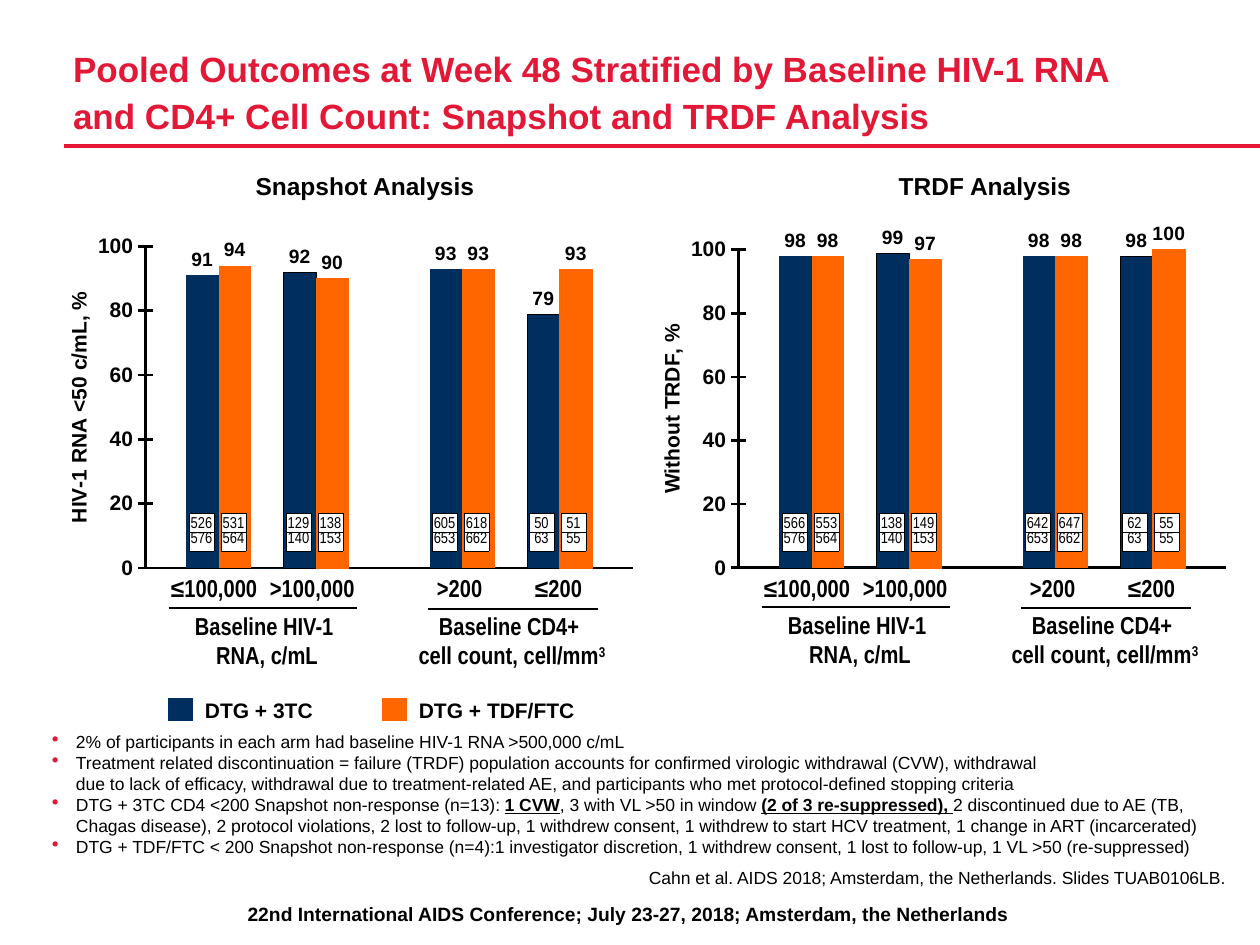
import pptx
import pptx.util
import pptx.chart.data
import pptx.dml.color
import pptx.enum.chart
import pptx.enum.shapes
import pptx.enum.text
import pptx.oxml
import pptx.oxml.ns

RED = pptx.dml.color.RGBColor(0xE3, 0x18, 0x36)
NAVY = pptx.dml.color.RGBColor(0x00, 0x2F, 0x5F)
ORANGE = pptx.dml.color.RGBColor(0xFF, 0x66, 0x00)
BLUE = pptx.dml.color.RGBColor(0x00, 0x98, 0xDB)
BLACK = pptx.dml.color.RGBColor(0, 0, 0)
WHITE = pptx.dml.color.RGBColor(0xFF, 0xFF, 0xFF)
SCALE = 914400 / 126
ALIGN = pptx.enum.text.PP_ALIGN
ANCHOR = pptx.enum.text.MSO_ANCHOR
NARROW = "Arial Narrow"
PLAIN = "{2D5ABB26-0587-4C30-8999-92F81FD0307C}"

BARS = [("Series 1", NAVY, None), ("Series 2", ORANGE, None), ("Series 3", BLUE, None),
        ("Series 4", NAVY, BLACK), ("Series 5", ORANGE, ORANGE)]
GROUPS = [(109, "≤100,000", 87), (208, ">100,000", 86), (375, ">200", 46), (473, "≤200", 48)]
RULES = [(107, 295, 0), (366, 536, 1)]
PAIRS = [127, 224, 370, 467]
NOTES = [
    [("2% of participants in each arm had baseline HIV-1 RNA >500,000 c/mL", False)],
    [("Treatment related discontinuation = failure (TRDF) population accounts for confirmed "
      "virologic withdrawal (CVW), withdrawal\ndue to lack of efficacy, withdrawal due to "
      "treatment-related AE, and participants who met protocol-defined stopping criteria", False)],
    [("DTG + 3TC CD4 <200 Snapshot non-response (n=13): ", False), ("1 CVW", True),
     (", 3 with VL >50 in window ", False), ("(2 of 3 re-suppressed), ", True),
     ("2 discontinued due to AE (TB, Chagas disease), 2 protocol violations, 2 lost to follow-up, "
      "1 withdrew consent, 1 withdrew to start HCV treatment, 1 change in ART (incarcerated)", False)],
    [("DTG + TDF/FTC < 200 Snapshot non-response (n=4):1 investigator discretion, "
      "1 withdrew consent, 1 lost to follow-up, 1 VL >50 (re-suppressed)", False)],
]


def px(n):
    return round(n * SCALE)


def style(font, size, bold=False, color=BLACK, name="Arial"):
    font.size = pptx.util.Pt(size)
    font.bold = bold
    font.color.rgb = color
    font.name = name


def frame(slide, x, y, w, h, wrap=True):
    tf = slide.shapes.add_textbox(px(x), px(y), px(w), px(h)).text_frame
    tf.margin_left = tf.margin_right = tf.margin_top = tf.margin_bottom = 0
    tf.word_wrap = wrap
    return tf


def label(slide, box, text, size, bold=True, color=BLACK, name="Arial", align=ALIGN.LEFT, wrap=True):
    tf = frame(slide, *box, wrap)
    para = tf.paragraphs[0]
    para.text = text
    para.alignment = align
    for run in para.runs:
        style(run.font, size, bold, color, name)
    return tf


def rule(slide, x1, x2, y, color, width):
    line = slide.shapes.add_connector(pptx.enum.shapes.MSO_CONNECTOR.STRAIGHT,
                                      px(x1), px(y), px(x2), px(y))
    line.line.color.rgb = color
    line.line.width = pptx.util.Pt(width)
    pptx.oxml.ns.qn("a:effectLst")
    line._element.spPr.append(pptx.oxml.parse_xml(
        f'<a:effectLst {pptx.oxml.ns.nsdecls("a")}/>'))


def grid(slide, x, y, cols, rows):
    table = slide.shapes.add_table(len(rows), len(cols), px(x), px(y),
                                   px(sum(cols)), px(sum(rows))).table
    table.first_row = table.horz_banding = False
    table._tbl.tblPr.find(pptx.oxml.ns.qn("a:tableStyleId")).text = PLAIN
    for col, w in zip(table.columns, cols):
        col.width = px(w)
    for row, h in zip(table.rows, rows):
        row.height = px(h)
    return table


def cell_fill(cell, sides, edge, width, fill):
    for side in sides:
        cell._tc.get_or_add_tcPr().append(pptx.oxml.parse_xml(
            f'<a:ln{side} {pptx.oxml.ns.nsdecls("a")} w="{pptx.util.Pt(width)}">'
            f'<a:solidFill><a:srgbClr val="{edge}"/></a:solidFill></a:ln{side}>'))
    cell.fill.solid()
    cell.fill.fore_color.rgb = fill
    cell.margin_left = cell.margin_right = cell.margin_top = cell.margin_bottom = 0


def ratio(slide, x, top, base):
    table = grid(slide, x, 513, [25], [19, 19])
    for row, (text, anchor) in enumerate([(top, ANCHOR.BOTTOM), (base, ANCHOR.TOP)]):
        cell = table.cell(row, 0)
        cell_fill(cell, "LRTB", BLACK, 0.5, WHITE)
        cell.vertical_anchor = anchor
        para = cell.text_frame.paragraphs[0]
        para.text = str(text)
        para.alignment = ALIGN.CENTER
        style(para.runs[0].font, 9, name=NARROW)


def legend(slide):
    table = grid(slide, 168, 698, [25, 189, 25, 202], [25])
    items = [(NAVY, ""), (WHITE, "DTG + 3TC"), (ORANGE, ""), (WHITE, "DTG + TDF/FTC")]
    for col, (fill, text) in enumerate(items):
        cell = table.cell(0, col)
        cell_fill(cell, "B", WHITE, 3, fill)
        cell.vertical_anchor = ANCHOR.MIDDLE
        para = cell.text_frame.paragraphs[0]
        if text:
            cell.margin_left = px(12)
            para.text = text
            style(para.runs[0].font, 12, True)
        else:
            para._p.get_or_add_endParaRPr().set("sz", "1000")


def chart(slide, x, title, rows, top, tall):
    data = pptx.chart.data.CategoryChartData()
    data.categories = ["1", "2"]
    for (name, _, _), vals in zip(BARS, rows):
        data.add_series(name, vals)
    obj = slide.shapes.add_chart(pptx.enum.chart.XL_CHART_TYPE.COLUMN_CLUSTERED,
                                 px(x), px(219), px(576), px(362), data).chart
    obj.has_title = obj.has_legend = False
    style(obj.font, 18)
    plot = obj.plots[0]
    plot.gap_width = 250
    plot.overlap = 0
    plot.vary_by_categories = False
    for bar, (name, fill, edge) in zip(plot.series, BARS):
        bar.format.fill.solid()
        bar.format.fill.fore_color.rgb = fill
        if edge is not None:
            bar.format.line.color.rgb = edge
            bar.format.line.width = pptx.util.Pt(0.25)
        if name != "Series 3":
            tags = bar.data_labels
            tags.show_value = True
            tags.position = pptx.enum.chart.XL_LABEL_POSITION.OUTSIDE_END
            tags.number_format = "0"
            tags.number_format_is_linked = False
            style(tags.font, 11, True)
    cat, val = obj.category_axis, obj.value_axis
    for axis in (cat, val):
        axis.has_major_gridlines = False
        axis.format.line.color.rgb = BLACK
        axis.format.line.width = pptx.util.Pt(1.5)
        style(axis.tick_labels.font, 12, True)
    cat.major_tick_mark = pptx.enum.chart.XL_TICK_MARK.NONE
    cat.tick_label_position = pptx.enum.chart.XL_TICK_LABEL_POSITION.NONE
    val.major_tick_mark = pptx.enum.chart.XL_TICK_MARK.CROSS
    val.minimum_scale, val.maximum_scale, val.major_unit = 0, 100, 20
    val.tick_labels.number_format = "0"
    val.tick_labels.number_format_is_linked = False
    tf = val.axis_title.text_frame
    tf.text = title
    style(tf.paragraphs[0].runs[0].font, 12, True)
    tf._txBody.bodyPr.set("rot", "-5400000")
    tf._txBody.bodyPr.set("vert", "horz")
    area = obj._chartSpace.chart.plotArea
    for old in area.findall(pptx.oxml.ns.qn("c:layout")):
        area.remove(old)
    area.insert(0, pptx.oxml.parse_xml(
        f'<c:layout {pptx.oxml.ns.nsdecls("c")}><c:manualLayout><c:layoutTarget val="inner"/>'
        f'<c:xMode val="edge"/><c:yMode val="edge"/><c:x val="0.145"/><c:y val="{top}"/>'
        f'<c:w val="0.846"/><c:h val="{tall}"/></c:manualLayout></c:layout>'))


def panel(slide, x, y, head, head_x, title, rows, top, tall, counts):
    chart(slide, x, title, rows, top, tall)
    label(slide, (head_x, 171, 440, 30), head, 14, align=ALIGN.CENTER)
    for left, text, w in GROUPS:
        label(slide, (x + left, 573, w, 30), text, 14, name=NARROW, wrap=False)
    for start, end, drop in RULES:
        rule(slide, x + start, x + end, y + drop, BLACK, 1.5)
    label(slide, (x + 132, y + 3, 146, 59), "Baseline HIV-1 \nRNA, c/mL", 14,
          name=NARROW, align=ALIGN.CENTER, wrap=False)
    tf = label(slide, (x + 355, y + 3, 190, 59), "Baseline CD4+ \ncell count, cell/mm", 14,
               name=NARROW, align=ALIGN.CENTER, wrap=False)
    power = tf.paragraphs[0].add_run()
    power.text = "3"
    style(power.font, 14, True, name=NARROW)
    power.font._element.set("baseline", "30000")
    for i, (part, whole) in enumerate(counts):
        ratio(slide, x + PAIRS[i // 2] + i % 2 * 32, part, whole)


def bullets(slide):
    tf = frame(slide, 36, 731, 1168, 116)
    for i, parts in enumerate(NOTES):
        para = tf.paragraphs[0] if i == 0 else tf.add_paragraph()
        para.text = parts[0][0]
        for text, _ in parts[1:]:
            para.add_run().text = text
        props = para._p.get_or_add_pPr()
        props.set("marL", str(px(40)))
        props.set("indent", str(px(-24)))
        for body in (f'buClr {pptx.oxml.ns.nsdecls("a")}><a:srgbClr val="{RED}"/></a:buClr>',
                     f'buSzPct {pptx.oxml.ns.nsdecls("a")} val="115000"/>',
                     f'buChar {pptx.oxml.ns.nsdecls("a")} char="•"/>'):
            props.append(pptx.oxml.parse_xml("<a:" + body))
        marks = [mark for _, mark in parts] if len(parts) > 1 else [False] * len(para.runs)
        for run, mark in zip(para.runs, marks):
            style(run.font, 10, mark)
            run.font.underline = mark


def main():
    deck = pptx.Presentation()
    deck.slide_width, deck.slide_height = px(1260), px(945)
    slide = deck.slides.add_slide(deck.slide_layouts[6])
    rule(slide, 64, 1260, 146, RED, 2)
    tf = label(slide, (73, 21, 1040, 116), "Pooled Outcomes at Week 48 Stratified by Baseline HIV-1 "
               "RNA and CD4+ Cell Count: Snapshot and TRDF Analysis", 20, color=RED)
    tf.vertical_anchor = ANCHOR.BOTTOM
    tf.paragraphs[0].line_spacing = pptx.util.Pt(27)
    panel(slide, 62, 608, "Snapshot Analysis", 145, "HIV-1 RNA <50 c/mL, %",
          [(91, 93), (94, 93), (0, None), (92, 79), (90, 93)], 0.076, 0.889,
          [(526, 576), (531, 564), (129, 140), (138, 153),
           (605, 653), (618, 662), (50, 63), (51, 55)])
    panel(slide, 655, 607, "TRDF Analysis", 765, "Without TRDF, %",
          [(98, 98), (98, 98), (0, None), (99, 98), (97, 100)], 0.085, 0.879,
          [(566, 576), (553, 564), (138, 140), (149, 153),
           (642, 653), (647, 662), (62, 63), (55, 55)])
    legend(slide)
    bullets(slide)
    label(slide, (73, 867, 1152, 25), "Cahn et al. AIDS 2018; Amsterdam, the Netherlands. "
          "Slides TUAB0106LB.", 10, False, align=ALIGN.RIGHT)
    label(slide, (8, 902, 1241, 25), "22nd International AIDS Conference; July 23-27, 2018; "
          "Amsterdam, the Netherlands", 11, align=ALIGN.CENTER)
    deck.save("out.pptx")


if __name__ == "__main__":
    main()
